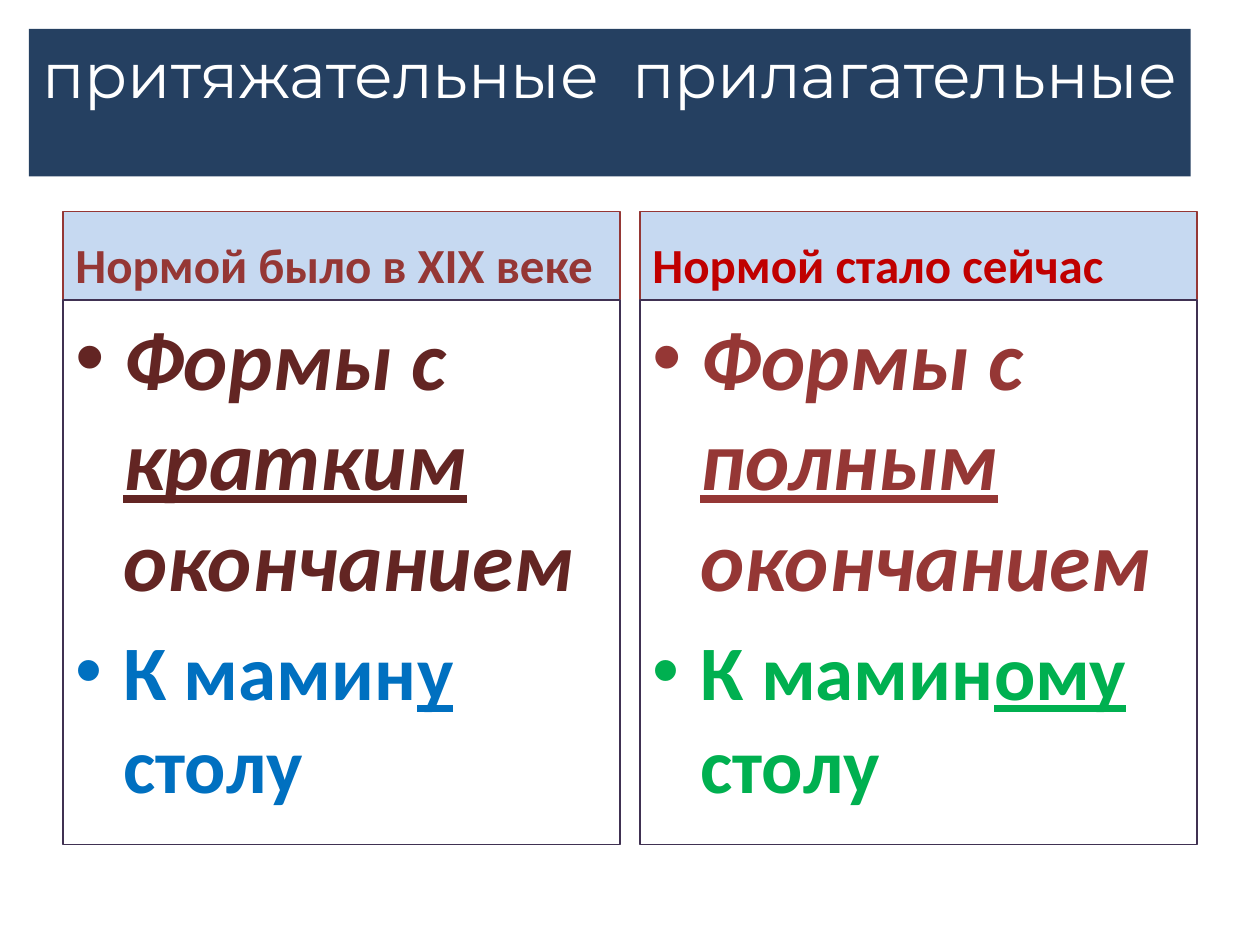
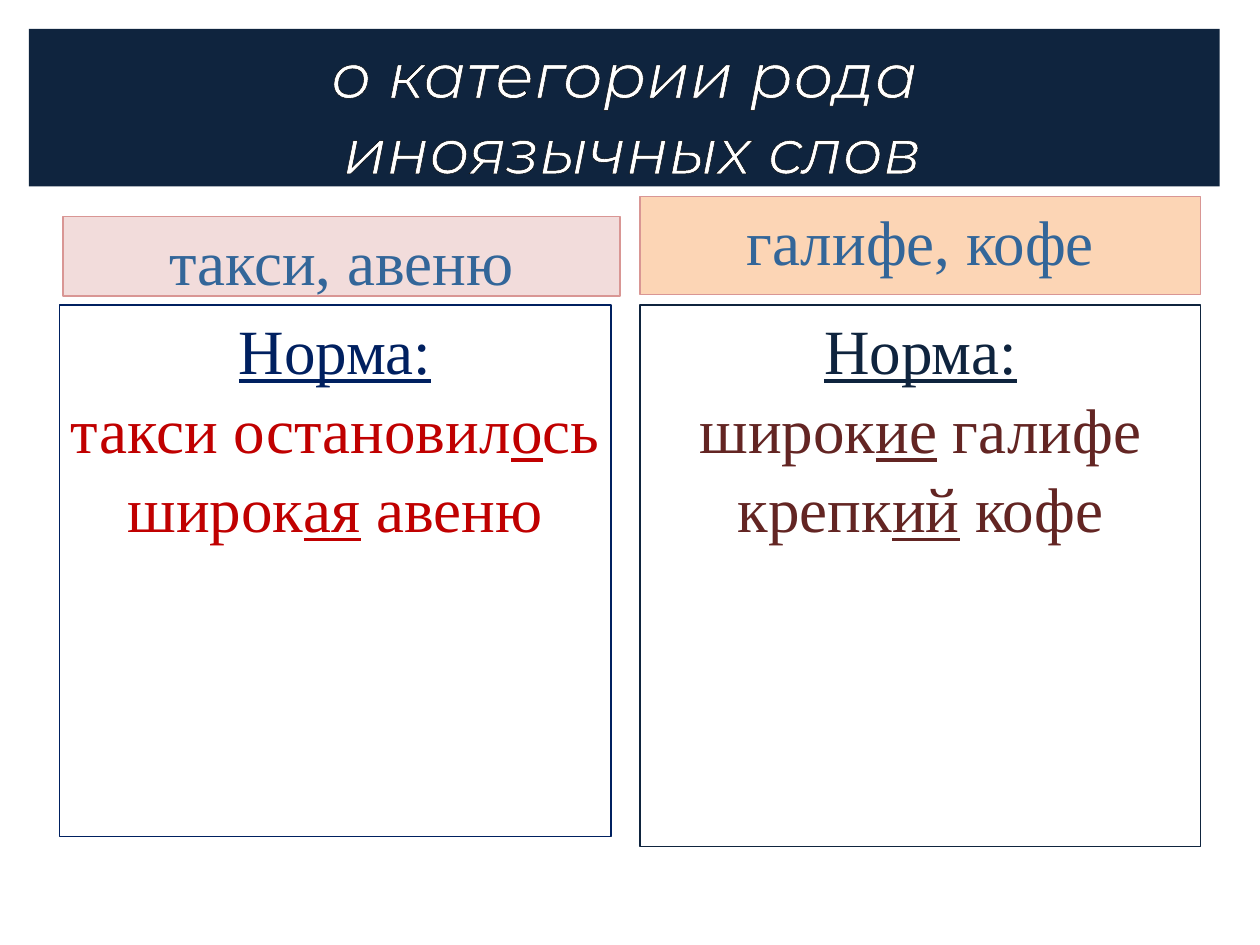
from lxml.etree import SubElement
from pptx import Presentation
from pptx.dml.color import RGBColor
from pptx.enum.shapes import MSO_SHAPE
from pptx.enum.text import MSO_ANCHOR, PP_ALIGN
from pptx.oxml.ns import qn
from pptx.util import Inches, Pt

WHITE, NAVY, INK = "FFFFFF", "254061", "0F243E"
BLUE, RED, WINE, BROWN = "C6D9F1", "C00000", "953735", "632523"
PLUM, ROSE, STEEL, DEEP = "403152", "D99694", "336699", "002060"
SANS, SERIF, HEAD = "Calibri", "Times New Roman", "Montserrat"
EDGE, WIDE, STEP = 0.5, 4.42, 4.58


def paint(part, tone):
    part.solid()
    part.fore_color.rgb = RGBColor.from_string(tone)


def panel(page, spot, rows, font, fill=None, line=None, wrap=False,
          align=PP_ALIGN.CENTER, anchor=MSO_ANCHOR.TOP):
    box = page.shapes.add_shape(MSO_SHAPE.RECTANGLE, *map(Inches, spot))
    box.shadow.inherit = False
    if fill:
        paint(box.fill, fill)
    else:
        box.fill.background()
    if line:
        paint(box.line.fill, line)
        box.line.width = Pt(0.75)
    else:
        box.line.fill.background()
    frame = box.text_frame
    frame.word_wrap = wrap
    frame.vertical_anchor = anchor
    frame.text = "\n".join(row[0] for row in rows)
    for para, (text, size, tone, bold, slant, gap) in zip(frame.paragraphs, rows):
        para.text = ""
        para.alignment = align
        para.space_before = Pt(gap)
        for spot, piece in enumerate(text.split("_")):
            if piece:
                run = para.add_run()
                run.text = piece
                face = run.font
                face.name, face.size = font, Pt(size)
                face.bold, face.italic = bold, slant
                face.underline = spot % 2 == 1
                paint(face.fill, tone)
    return frame


deck = Presentation()
deck.slide_width, deck.slide_height = Inches(10), Inches(7.5)
first, second = [deck.slides.add_slide(deck.slide_layouts[6]) for _ in range(2)]

norms = [
    ("Нормой было в XIX веке", WINE, "Формы с _кратким_ окончанием", BROWN,
     "К мамин_у_ столу", "0070C0"),
    ("Нормой стало сейчас", RED, "Формы с _полным _окончанием", WINE,
     "К мамин_ому _столу", "00B050"),
]
for col, (name, tint, form, shade, case, hue) in enumerate(norms):
    left = EDGE + col * STEP
    panel(first, (left, 1.68, WIDE, 0.7), [(name, 28, tint, True, False, 5.6)],
          SANS, BLUE, WINE, True, PP_ALIGN.LEFT, MSO_ANCHOR.BOTTOM)
    rows = [(form, 48, shade, True, True, 9.6), (case, 44, hue, True, False, 8.8)]
    frame = panel(first, (left, 2.38, WIDE, 4.32), rows, SANS, None, PLUM,
                  True, PP_ALIGN.LEFT)
    for para in frame.paragraphs:
        props = para._p.get_or_add_pPr()
        props.set("marL", str(Inches(0.38)))
        props.set("indent", str(-Inches(0.38)))
        SubElement(props, qn("a:buFont")).set("typeface", "Arial")
        SubElement(props, qn("a:buChar")).set("char", "•")
panel(first, (0.23, 0.23, 9.22, 1.17),
      [("притяжательные  прилагательные", 36, WHITE, False, False, 0)], HEAD, NAVY)

title = [(text, 36, WHITE, False, True, 0)
         for text in ("о категории рода", " иноязычных слов")]
frame = panel(second, (0.23, 0.23, 9.45, 1.25), title, HEAD, INK)
for para in frame.paragraphs:
    for run in para.runs:
        props = run._r.get_or_add_rPr()
        rim = SubElement(props, qn("a:ln"), w=str(Pt(0.75)))
        SubElement(SubElement(rim, qn("a:solidFill")), qn("a:srgbClr"), val="000000")
        props.insert(0, rim)

words = [
    ("такси, авеню", (0.5, 1.72, 4.42, 0.63), "F2DCDB", (0.47, 2.42, 4.38, 4.22),
     DEEP, RED, ("такси остановил_о_сь", "широк_ая_ авеню")),
    ("галифе, кофе", (5.08, 1.56, 4.45, 0.78), "FCD5B5", (5.08, 2.42, 4.45, 4.3),
     INK, BROWN, ("широк_ие_ галифе", "крепк_ий_ кофе")),
]
for name, top, fill, body, dark, tone, cases in words:
    panel(second, top, [(name, 36, STEEL, False, False, 5)], SERIF, fill, ROSE)
    rows = [("_Норма:_", 36, dark, False, False, 5)]
    rows += [(case, 36, tone, False, False, 2) for case in cases]
    panel(second, body, rows, SERIF, None, dark)

deck.save("out.pptx")
